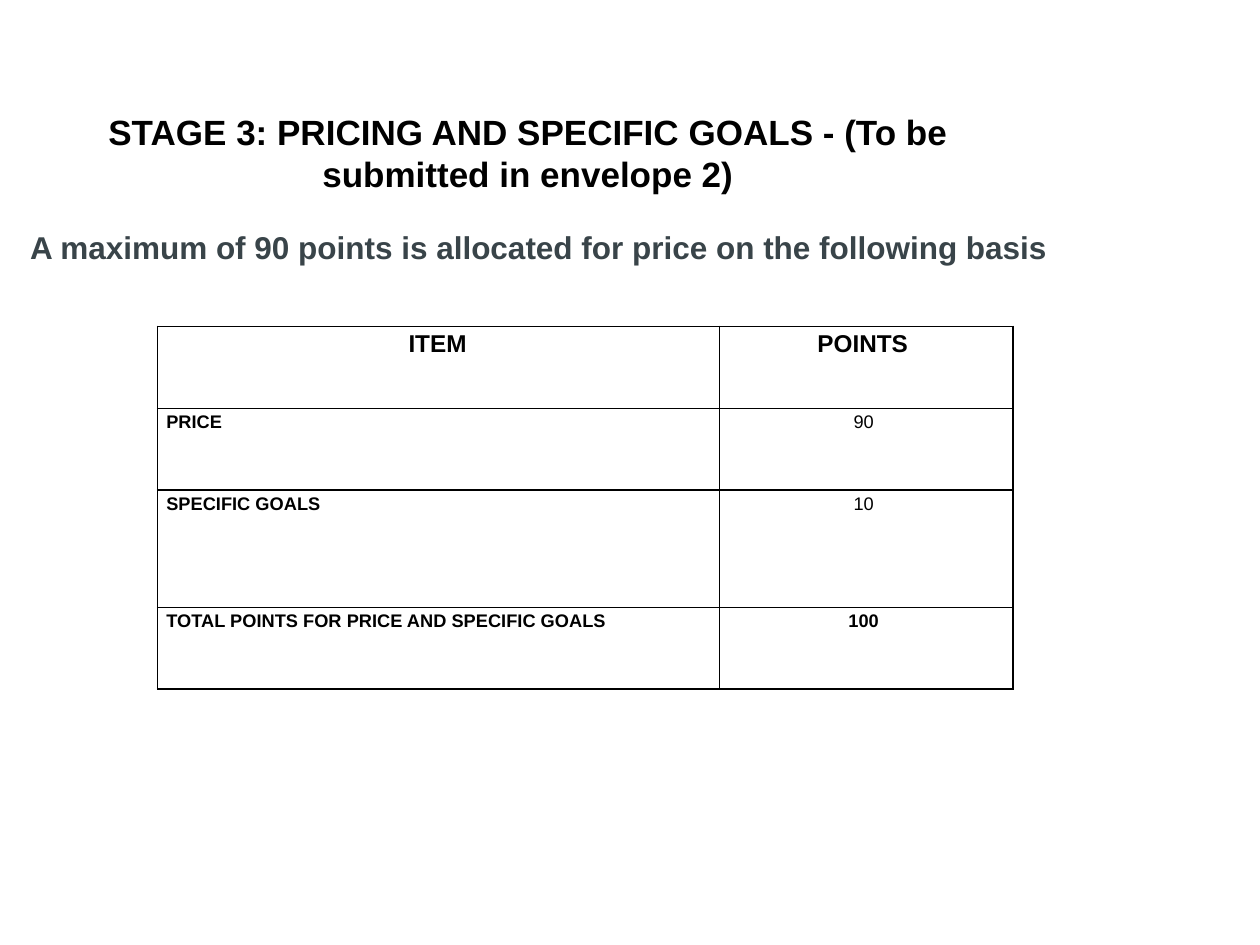
"""Build the pricing and specific goals slide."""
from typing import NamedTuple

from lxml import etree
from pptx import Presentation
from pptx.dml.color import RGBColor
from pptx.enum import text
from pptx.oxml import ns
from pptx.util import Inches, Pt

COLORS = {"ink": "000000", "slate": "394449"}
CENTER, LEFT = text.PP_ALIGN.CENTER, text.PP_ALIGN.LEFT
COLUMN_WIDTHS = (4.46, 2.33)


class Heading(NamedTuple):
    """A line of heading text and its frame."""
    words: str
    left: float
    top: float
    width: float
    height: float
    size: int
    color: str
    align: text.PP_ALIGN
    anchor: text.MSO_ANCHOR


class Entry(NamedTuple):
    """The text of one table cell."""
    words: str
    size: int = 18
    bold: bool = True
    align: text.PP_ALIGN = LEFT
    indent: float = 0


class Row(NamedTuple):
    """One table row."""
    height: float
    item: Entry
    points: Entry


HEADINGS = (
    Heading("A maximum of 90 points is allocated for price on the following basis",
            0.14, 1.71, 9, 0.5, 18, "slate", LEFT, text.MSO_ANCHOR.MIDDLE),
    Heading("STAGE 3: PRICING AND SPECIFIC GOALS - (To be submitted in envelope 2)",
            0.14, 0.83, 8.1, 0.88, 20, "ink", CENTER, text.MSO_ANCHOR.TOP),
)
ROWS = (
    Row(0.65, Entry("ITEM ", 24, True, CENTER, 0.05),
        Entry("POINTS ", 24, True, CENTER, 0.01)),
    Row(0.65, Entry("PRICE"), Entry("90 ", 18, False, CENTER, 0.01)),
    Row(0.93, Entry("SPECIFIC GOALS"), Entry("10 ", 18, False, CENTER, 0.01)),
    Row(0.65, Entry("TOTAL POINTS FOR PRICE AND SPECIFIC GOALS"),
        Entry("100 ", 18, True, CENTER, 0.01)),
)


def add_run(paragraph, words: str, size: int, bold: bool, color: str):
    """Append a styled run and return it."""
    run = paragraph.add_run()
    run.text = words
    run.font.name = "Arial"
    run.font.size = Pt(size)
    run.font.bold = bold
    run.font.color.rgb = RGBColor.from_string(COLORS[color])
    return run


def draw_heading(slide, heading: Heading) -> None:
    """Draw a heading text box."""
    box = slide.shapes.add_textbox(Inches(heading.left), Inches(heading.top),
                                   Inches(heading.width), Inches(heading.height))
    frame = box.text_frame
    frame.word_wrap = True
    frame.vertical_anchor = heading.anchor
    paragraph = frame.paragraphs[0]
    paragraph.alignment = heading.align
    add_run(paragraph, heading.words, heading.size, True, heading.color)


def draw_borders(cell) -> None:
    """Give a cell one-point borders on all sides."""
    properties = cell._tc.get_or_add_tcPr()
    for side in ("L", "R", "T", "B"):
        line = etree.SubElement(properties, ns.qn(f"a:ln{side}"), w=str(Pt(1)))
        fill = etree.SubElement(line, ns.qn("a:solidFill"))
        etree.SubElement(fill, ns.qn("a:srgbClr"), val=COLORS["ink"])


def fill_cell(cell, entry: Entry) -> None:
    """Write a raised entry into a bordered, unfilled cell."""
    cell.margin_left, cell.margin_right = Inches(0.07), Inches(0.08)
    cell.margin_top, cell.margin_bottom = Inches(0.01), Inches(0)
    draw_borders(cell)
    cell.fill.background()
    paragraph = cell.text_frame.paragraphs[0]
    paragraph.alignment = entry.align
    if entry.indent:
        paragraph._p.get_or_add_pPr().set("marL", str(Inches(entry.indent)))
    run = add_run(paragraph, entry.words, entry.size, entry.bold, "ink")
    run._r.get_or_add_rPr().set("baseline", "30000")


def draw_points_table(slide) -> None:
    """Draw the table of items and points."""
    frame = slide.shapes.add_table(
        len(ROWS), len(COLUMN_WIDTHS), Inches(1.25), Inches(2.59),
        Inches(sum(COLUMN_WIDTHS)), Inches(sum(row.height for row in ROWS)))
    table = frame.table
    table.horz_banding = False
    for column, width in zip(table.columns, COLUMN_WIDTHS):
        column.width = Inches(width)
    for index, row in enumerate(ROWS):
        table.rows[index].height = Inches(row.height)
        for position, entry in enumerate((row.item, row.points)):
            fill_cell(table.cell(index, position), entry)


def main() -> None:
    """Build and save the slide."""
    deck = Presentation()
    deck.slide_width, deck.slide_height = Inches(10), Inches(7.5)
    slide = deck.slides.add_slide(deck.slide_layouts[6])
    draw_points_table(slide)
    for heading in HEADINGS:
        draw_heading(slide, heading)
    deck.save("out.pptx")


if __name__ == "__main__":
    main()
